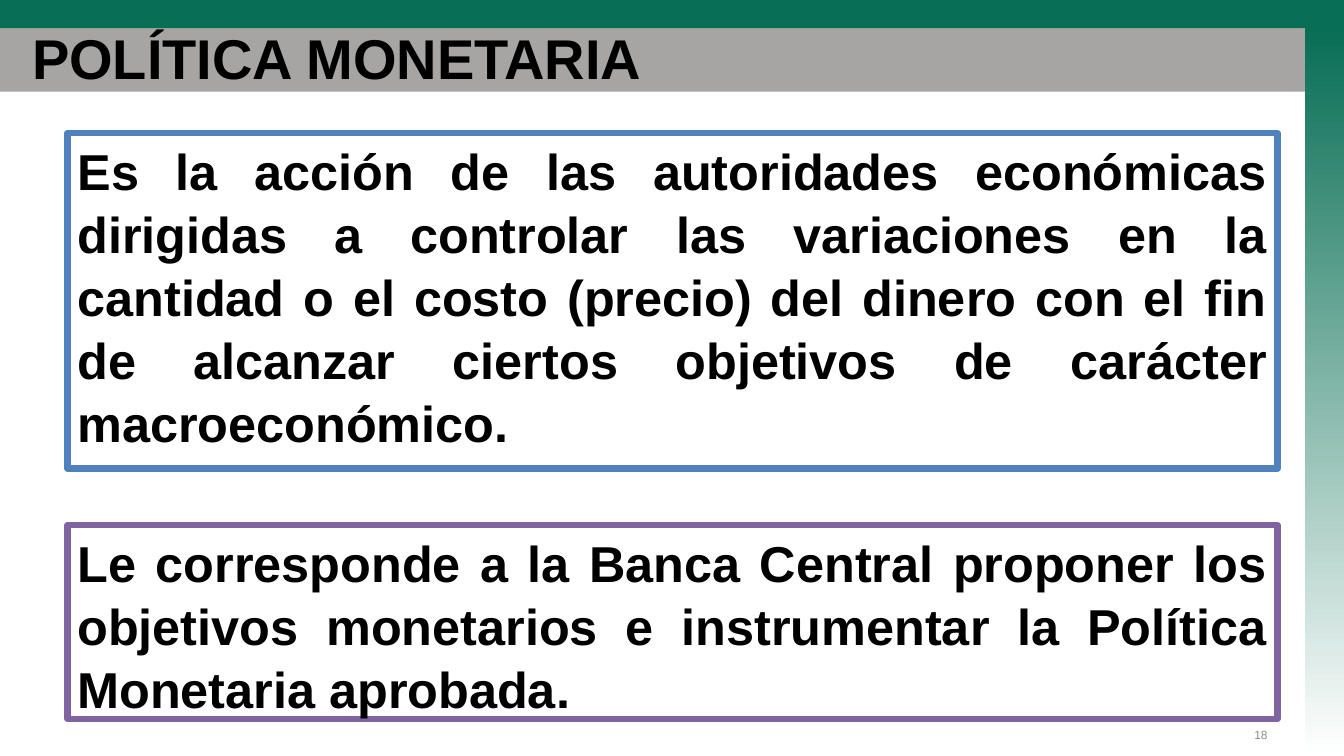
from pptx import Presentation
from pptx.dml.color import RGBColor
from pptx.enum.shapes import MSO_SHAPE
from pptx.enum.text import MSO_ANCHOR, PP_ALIGN
from pptx.util import Inches, Pt


def color(hex_value):
    return RGBColor.from_string(hex_value)


def write(shape, text, size, hex_value, bold, align, anchor):
    frame = shape.text_frame
    frame.word_wrap = True
    frame.vertical_anchor = anchor
    paragraph = frame.paragraphs[0]
    paragraph.text = text
    paragraph.alignment = align
    paragraph.font.name = "Arial"
    paragraph.font.size = Pt(size)
    paragraph.font.bold = bold
    paragraph.font.color.rgb = color(hex_value)
    return paragraph


prs = Presentation()
prs.slide_width = Inches(13.33)
prs.slide_height = Inches(7.5)
slide = prs.slides.add_slide(prs.slide_layouts[6])
shapes = slide.shapes

# Header and side bands
bands = [
    (0, 0.28, 13.33, 0.63, ["A6A5A4"]),
    (0, 0, 13.33, 0.28, ["086E54"]),
    (12.94, 0.28, 0.4, 7.22, ["086E54", "FFFFFF"]),
]
for left, top, width, height, fills in bands:
    band = shapes.add_shape(MSO_SHAPE.RECTANGLE, Inches(left), Inches(top),
                            Inches(width), Inches(height))
    band.shadow.inherit = False
    band.line.fill.background()
    if len(fills) == 1:
        band.fill.solid()
        band.fill.fore_color.rgb = color(fills[0])
    else:
        band.fill.gradient()
        band.fill.gradient_angle = 270
        for stop, hex_value in zip(band.fill.gradient_stops, fills):
            stop.color.rgb = color(hex_value)
            stop.position = fills.index(hex_value)

# Title and slide number
title = shapes.add_textbox(Inches(0.22), Inches(0.3), Inches(12.67), Inches(0.53))
write(title, "POLÍTICA MONETARIA", 40, "000000", True, PP_ALIGN.LEFT, MSO_ANCHOR.MIDDLE)
page_number = shapes.add_textbox(Inches(11.89), Inches(7.09), Inches(0.78), Inches(0.4))
write(page_number, "18", 8.5, "8C8C8C", False, PP_ALIGN.RIGHT, MSO_ANCHOR.MIDDLE)

# Definition and responsibility statements
statements = [
    (1.32, 3.33, "4F81BD",
     "Es la acción de las autoridades económicas dirigidas a controlar las "
     "variaciones en la cantidad o el costo (precio) del dinero con el fin de "
     "alcanzar ciertos objetivos de carácter macroeconómico."),
    (5.21, 1.92, "8064A2",
     "Le corresponde a la Banca Central proponer los objetivos monetarios e "
     "instrumentar la Política Monetaria aprobada."),
]
for top, height, border, text in statements:
    statement = shapes.add_shape(MSO_SHAPE.RECTANGLE, Inches(0.67), Inches(top),
                                 Inches(12), Inches(height))
    statement.shadow.inherit = False
    statement.fill.solid()
    statement.fill.fore_color.rgb = color("FFFFFF")
    statement.line.color.rgb = color(border)
    statement.line.width = Pt(4.5)
    paragraph = write(statement, text, 36, "000000", True, PP_ALIGN.JUSTIFY, MSO_ANCHOR.TOP)
    paragraph.line_spacing = 1.04

prs.save("out.pptx")
